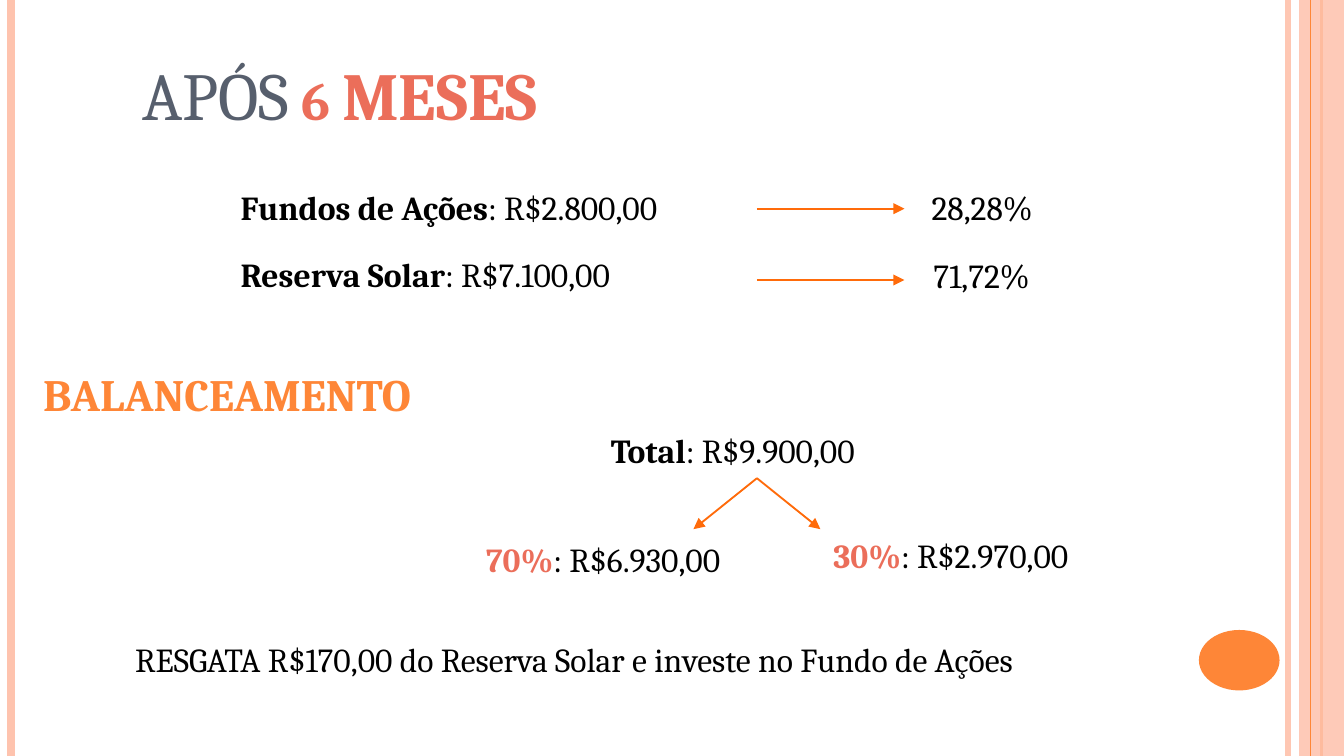
from lxml.etree import SubElement
from pptx import Presentation
from pptx.dml.color import RGBColor
from pptx.enum.shapes import MSO_CONNECTOR, MSO_SHAPE
from pptx.enum.text import MSO_ANCHOR, MSO_AUTO_SIZE, PP_ALIGN
from pptx.oxml.ns import qn
from pptx.util import Pt

COLOURS = {
    "text": "000000",
    "title": "575F6D",
    "accent": "EB6E5A",
    "orange": "FE8637",
    "arrow": "FF6B0A",
    "peach": "FEC3AE",
}
WIDTH, HEIGHT = 720, 405
BOND = "Reserva Solar"


class SlideBuilder:
    font = "Cambria"
    size = 18

    def __init__(self, page):
        self.page = page

    def colour(self, name):
        return RGBColor.from_string(COLOURS[name])

    def set_opacity(self, fill_parent, percent):
        colour = fill_parent.find(".//" + qn("a:srgbClr"))
        SubElement(colour, qn("a:alpha"), val=str(percent * 1000))

    def spans(self, para, parts, size):
        """Add runs given as (text, colour name, bold)."""
        for text, colour, bold in parts:
            span = para.add_run()
            span.text = text
            span.font.name = self.font
            span.font.size = Pt(size)
            span.font.bold = bold
            span.font.color.rgb = self.colour(colour)

    def title(self, left, top, width, height, parts):
        title = self.page.shapes.title
        title.left, title.top = Pt(left), Pt(top)
        title.width, title.height = Pt(width), Pt(height)
        frame = title.text_frame
        frame.auto_size = MSO_AUTO_SIZE.NONE
        frame.vertical_anchor = MSO_ANCHOR.BOTTOM
        para = frame.paragraphs[0]
        para.alignment = PP_ALIGN.CENTER
        self.spans(para, parts, 36)
        for properties in para._p.iter(qn("a:rPr")):
            properties.set("cap", "small")

    def text(self, left, top, width, parts, size=size):
        box = self.page.shapes.add_textbox(Pt(left), Pt(top), Pt(width), Pt(size * 1.6))
        frame = box.text_frame
        frame.word_wrap = True
        frame.auto_size = MSO_AUTO_SIZE.SHAPE_TO_FIT_TEXT
        self.spans(frame.paragraphs[0], parts, size)

    def amount(self, left, top, width, label, value, colour="text"):
        self.text(left, top, width, [(label, colour, True), (": " + value, "text", False)])

    def line(self, start, end, colour, weight):
        line = self.page.shapes.add_connector(
            MSO_CONNECTOR.STRAIGHT, *(Pt(value) for value in (*start, *end)))
        line.line.color.rgb = self.colour(colour)
        line.line.width = Pt(weight)
        SubElement(line._element.spPr, qn("a:effectLst"))
        return line

    def rule(self, x, colour, weight):
        return self.line((x, 0), (x, HEIGHT), colour, weight)

    def arrow(self, start, end):
        arrow = self.line(start, end, "arrow", 1)
        SubElement(arrow._element.spPr.find(qn("a:ln")), qn("a:tailEnd"), type="triangle")

    def shape(self, kind, left, top, width, height, colour):
        shape = self.page.shapes.add_shape(kind, Pt(left), Pt(top), Pt(width), Pt(height))
        shape.shadow.inherit = False
        shape.fill.solid()
        shape.fill.fore_color.rgb = self.colour(colour)
        shape.line.fill.background()
        return shape


def draw_frame(slide):
    edge = slide.rule(690, "peach", 3)
    slide.set_opacity(edge._element.spPr, 93)
    slide.rule(6, "peach", 4.5)
    slide.rule(708, "orange", 1.5)
    band = slide.shape(MSO_SHAPE.RECTANGLE, 696, 0, 24, HEIGHT, "peach")
    slide.set_opacity(band._element.spPr, 87)
    slide.rule(702, "orange", 0.75)
    slide.shape(MSO_SHAPE.OVAL, 642.3, 337.5, 43.2, 32.4, "orange")


def draw_holdings(slide):
    slide.amount(121.8, 96.5, 278, "Fundos de Ações", "R$2.800,00")
    slide.amount(121.8, 132.5, 273, BOND, "R$7.100,00")
    shares = [(492, 96.5, 111.8, "28,28%"), (493, 133, 150, "71,72%")]
    for left, top, arrow_y, share in shares:
        slide.arrow((405.5, arrow_y), (484.5, arrow_y))
        slide.text(left, top, 142, [(share, "text", False)])


def draw_balancing(slide):
    slide.text(16, 193, 287, [("BALANCEAMENTO", "orange", True)], size=24)
    slide.amount(320.2, 227, 170, "Total", "R$9.900,00")
    centre = 405.5
    for offset in (-34, 34):
        slide.arrow((centre, 256.2), (centre + offset, 283.5))
    slide.amount(253.4, 285.2, 169, "70%", "R$6.930,00", "accent")
    slide.amount(439.4, 283, 169, "30%", "R$2.970,00", "accent")
    slide.text(65.3, 338.7, 601, [
        (f"RESGATA R$170,00 do {BOND} e investe no Fundo de Ações", "text", False)])


def main():
    deck = Presentation()
    deck.slide_width, deck.slide_height = Pt(WIDTH), Pt(HEIGHT)
    slide = SlideBuilder(deck.slides.add_slide(deck.slide_layouts[5]))
    draw_frame(slide)
    slide.title(14.7, 23.6, 335, 52, [("APÓS ", "title", False), ("6 MESES", "accent", True)])
    draw_holdings(slide)
    draw_balancing(slide)
    deck.save("out.pptx")


if __name__ == "__main__":
    main()
